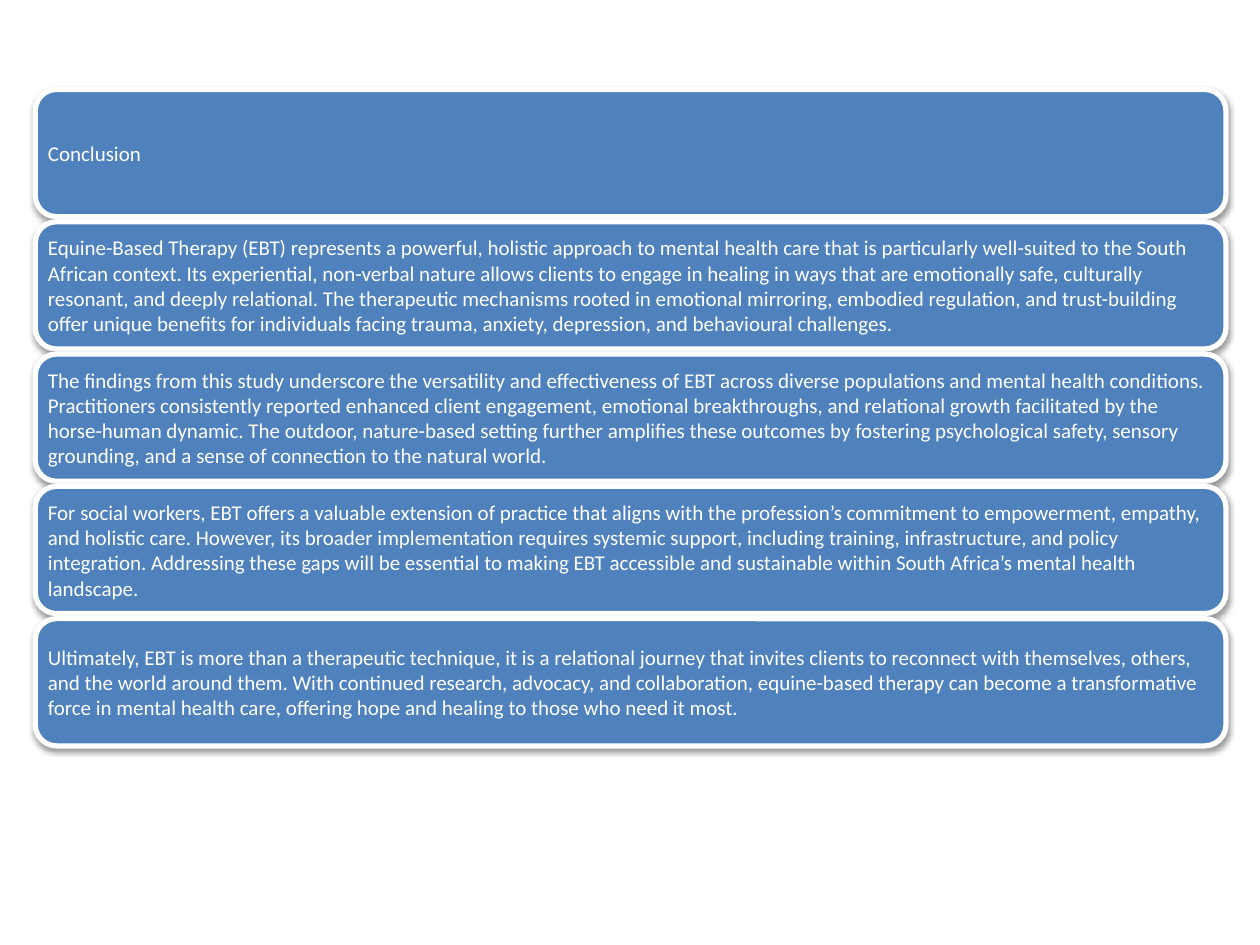
from dataclasses import dataclass

from lxml.etree import SubElement
from pptx import Presentation
from pptx.dml.color import RGBColor
from pptx.enum.shapes import MSO_SHAPE as Preset
from pptx.enum.text import MSO_ANCHOR as Anchor, MSO_AUTO_SIZE as AutoSize, PP_ALIGN as Align
from pptx.oxml.ns import qn
from pptx.util import Inches, Pt

BLUE, WHITE, BLACK = "4F81BD", "FFFFFF", "000000"
LEFT, FIRST_TOP, PITCH = 0.28, 0.71, 1.05
CARD_WIDTH, CARD_HEIGHT = 9.45, 1.01
INSET = 0.05

HEADING = "Conclusion"
STATEMENTS = [
    "Equine-Based Therapy (EBT) represents a powerful, holistic approach to mental health care "
    "that is particularly well-suited to the South African context. Its experiential, non-verbal "
    "nature allows clients to engage in healing in ways that are emotionally safe, culturally "
    "resonant, and deeply relational. The therapeutic mechanisms rooted in emotional mirroring, "
    "embodied regulation, and trust-building offer unique benefits for individuals facing trauma, "
    "anxiety, depression, and behavioural challenges.",
    "The findings from this study underscore the versatility and effectiveness of EBT across "
    "diverse populations and mental health conditions. Practitioners consistently reported "
    "enhanced client engagement, emotional breakthroughs, and relational growth facilitated by "
    "the horse-human dynamic. The outdoor, nature-based setting further amplifies these outcomes "
    "by fostering psychological safety, sensory grounding, and a sense of connection to the "
    "natural world.",
    "For social workers, EBT offers a valuable extension of practice that aligns with the "
    "profession’s commitment to empowerment, empathy, and holistic care. However, its broader "
    "implementation requires systemic support, including training, infrastructure, and policy "
    "integration. Addressing these gaps will be essential to making EBT accessible and "
    "sustainable within South Africa’s mental health landscape.",
    "Ultimately, EBT is more than a therapeutic technique, it is a relational journey that "
    "invites clients to reconnect with themselves, others, and the world around them. With "
    "continued research, advocacy, and collaboration, equine-based therapy can become a "
    "transformative force in mental health care, offering hope and healing to those who need "
    "it most.",
]


@dataclass(frozen=True)
class Box:
    left: float
    top: float
    width: float
    height: float

    def inset(self, margin: float) -> "Box":
        return Box(self.left + margin, self.top + margin,
                   self.width - 2 * margin, self.height - 2 * margin)

    def lengths(self) -> tuple:
        return tuple(map(Inches, (self.left, self.top, self.width, self.height)))


def color(value: str) -> RGBColor:
    return RGBColor.from_string(value)


def add_shadow(shape, *, hue: str, opacity: int, blur: float, distance: float) -> None:
    """Give the shape a soft shadow that falls straight down."""
    shape.shadow.inherit = False
    effects = shape.element.spPr.find(qn("a:effectLst"))
    shadow = SubElement(effects, qn("a:outerShdw"), blurRad=str(Pt(blur)),
                        dist=str(Pt(distance)), dir=str(90 * 60000), rotWithShape="0")
    tint = SubElement(shadow, qn("a:srgbClr"), val=hue)
    SubElement(tint, qn("a:alpha"), val=str(opacity * 1000))


def draw_card(slide, box: Box) -> None:
    card = slide.shapes.add_shape(Preset.ROUNDED_RECTANGLE, *box.lengths())
    card.fill.solid()
    card.fill.fore_color.rgb = color(BLUE)
    card.line.color.rgb = color(WHITE)
    card.line.width = Pt(3)
    add_shadow(card, hue=BLACK, opacity=38, blur=3.1, distance=1.6)


def write(shape, text: str, *, size: float = 12, font: str = "Calibri",
          hue: str = WHITE, align=Align.LEFT, margin: float = 0.05) -> None:
    frame = shape.text_frame
    frame.text = text
    frame.word_wrap = True
    frame.auto_size = AutoSize.NONE
    frame.vertical_anchor = Anchor.MIDDLE
    frame.margin_left = frame.margin_right = Inches(margin)
    frame.margin_top = frame.margin_bottom = Inches(margin)
    paragraph = frame.paragraphs[0]
    paragraph.alignment = align
    paragraph.space_before = Pt(0)
    run_font = paragraph.runs[0].font
    run_font.name, run_font.size = font, Pt(size)
    run_font.color.rgb = color(hue)


def main() -> None:
    deck = Presentation()
    deck.slide_width, deck.slide_height = Inches(10), Inches(7.5)
    slide = deck.slides.add_slide(deck.slide_layouts[5])

    heading_card, *statement_cards = [
        Box(LEFT, FIRST_TOP + row * PITCH, CARD_WIDTH, CARD_HEIGHT)
        for row in range(1 + len(STATEMENTS))
    ]

    draw_card(slide, heading_card)
    heading = slide.shapes.title
    heading.left, heading.top, heading.width, heading.height = heading_card.inset(INSET).lengths()
    write(heading, HEADING)
    slide.shapes.element.append(heading.element)  # bring the title in front of its card

    for box, statement in zip(statement_cards, STATEMENTS):
        draw_card(slide, box)
        write(slide.shapes.add_textbox(*box.inset(INSET).lengths()), statement)

    deck.save("out.pptx")


if __name__ == "__main__":
    main()
